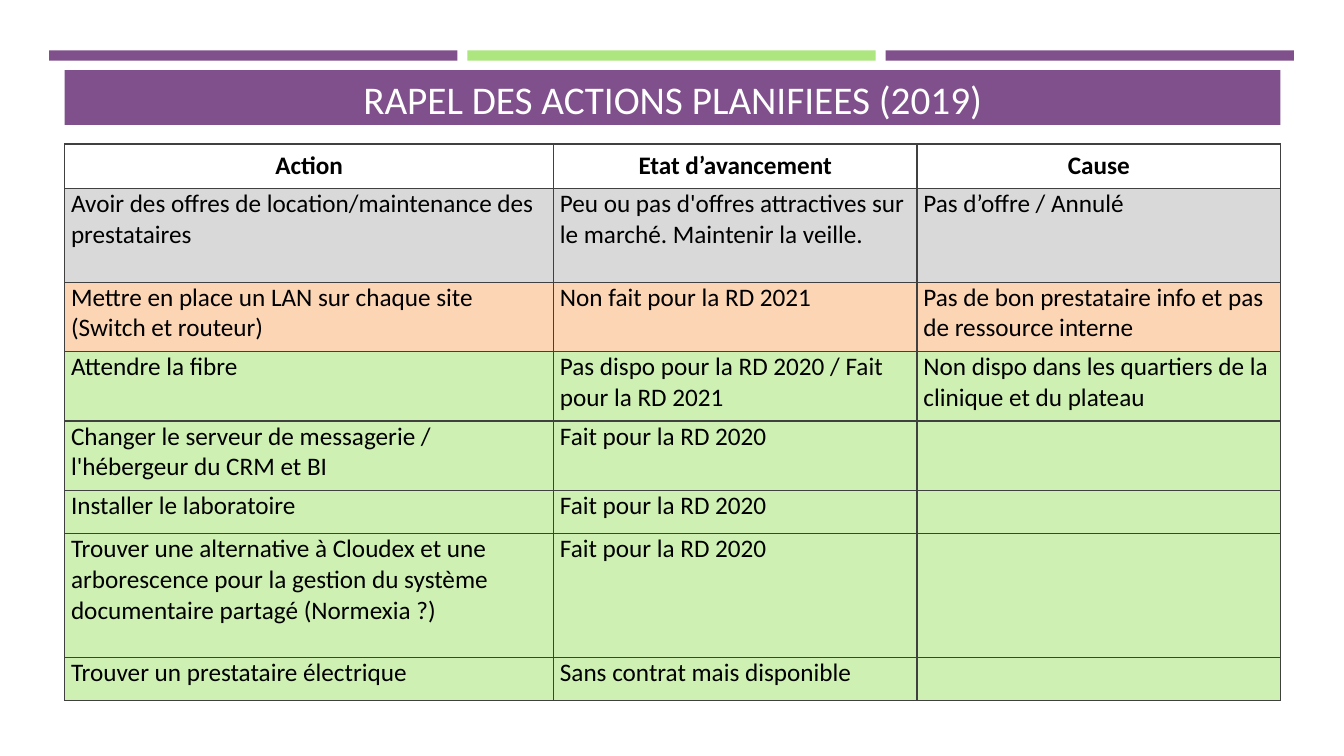
"""Build the slide that reviews the actions planned for 2019."""
from dataclasses import dataclass

from lxml import etree
from pptx import Presentation
from pptx import util as u
from pptx.dml.color import RGBColor
from pptx.enum import shapes, text
from pptx.oxml import ns


@dataclass(frozen=True)
class Theme:
    font: str = "Calibri"
    head: int = 28
    body: int = 18
    plum: str = "7F508B"
    lime: str = "ADE67F"
    white: str = "FFFFFF"
    black: str = "000000"
    line: str = "404040"
    void: str = "D9D9D9"
    late: str = "FCD5B5"
    done: str = "CEF0B2"


LOOK = Theme()
LEFT, WIDTH = 1.63, 30.64
COLS = (12.32, 9.16, 9.16)
HEADS = ("Action", "Etat d’avancement", "Cause")
ROWS = (
    (2.36, LOOK.void, "Avoir des offres de location/maintenance des prestataires",
     "Peu ou pas d'offres attractives sur le marché. Maintenir la veille.",
     "Pas d’offre / Annulé"),
    (1.75, LOOK.late, "Mettre en place un LAN sur chaque site (Switch et routeur)",
     "Non fait pour la RD 2021",
     "Pas de bon prestataire info et pas de ressource interne"),
    (1.75, LOOK.done, "Attendre la fibre",
     "Pas dispo pour la RD 2020 / Fait pour la RD 2021",
     "Non dispo dans les quartiers de la clinique et du plateau"),
    (1.75, LOOK.done, "Changer le serveur de messagerie / l'hébergeur du CRM et BI",
     "Fait pour la RD 2020", ""),
    (1.09, LOOK.done, "Installer le laboratoire", "Fait pour la RD 2020", ""),
    (3.12, LOOK.done, "Trouver une alternative à Cloudex et une arborescence pour "
     "la gestion du système documentaire partagé (Normexia ?)",
     "Fait pour la RD 2020", ""),
    (1.09, LOOK.done, "Trouver un prestataire électrique",
     "Sans contrat mais disponible", ""),
)


def apply(item, form):
    """Set each attribute named in a dict of format values."""
    for name, value in form.items():
        setattr(item, name, value)


def paint(item, color):
    """Give a shape or cell a solid fill."""
    item.fill.solid()
    item.fill.fore_color.rgb = RGBColor.from_string(color)


def write(frame, words, size, color, bold, align):
    """Put one formatted paragraph in a text frame."""
    par = frame.paragraphs[0]
    par.alignment = align
    if words:
        run = par.add_run()
        run.text = words
        apply(run.font, {"name": LOOK.font, "size": u.Pt(size), "bold": bold})
        run.font.color.rgb = RGBColor.from_string(color)


def add_bar(slide, left, color):
    """Draw one of the thin bars along the top."""
    bar = slide.shapes.add_shape(shapes.MSO_SHAPE.RECTANGLE, u.Cm(left),
                                 u.Cm(1.27), u.Cm(10.29), u.Cm(0.26))
    bar.shadow.inherit = False
    bar.line.fill.background()
    paint(bar, color)


def add_title(slide, words):
    """Place the title on its coloured band."""
    title = slide.shapes.title
    apply(title, {"left": u.Cm(LEFT), "top": u.Cm(1.77),
                  "width": u.Cm(WIDTH), "height": u.Cm(1.38)})
    paint(title, LOOK.plum)
    apply(title.text_frame, {"vertical_anchor": text.MSO_ANCHOR.TOP,
                             "auto_size": text.MSO_AUTO_SIZE.NONE,
                             "word_wrap": True})
    write(title.text_frame, words, LOOK.head, LOOK.white, False,
          text.PP_ALIGN.CENTER)


def edge(cell):
    """Draw a thin line on all four sides of a cell."""
    props = cell._tc.get_or_add_tcPr()
    for side in ("lnL", "lnR", "lnT", "lnB"):
        line = etree.SubElement(props, ns.qn(f"a:{side}"), w=str(u.Pt(1)))
        fill = etree.SubElement(line, ns.qn("a:solidFill"))
        etree.SubElement(fill, ns.qn("a:srgbClr"), val=LOOK.line)


def fill_row(row, high, color, words, head):
    """Format and fill one table row."""
    row.height = u.Cm(high)
    anchor = text.MSO_ANCHOR.MIDDLE if head else text.MSO_ANCHOR.TOP
    align = text.PP_ALIGN.CENTER if head else text.PP_ALIGN.LEFT
    for cell, word in zip(row.cells, words):
        apply(cell, {"margin_left": u.Cm(0.16), "margin_right": u.Cm(0.16),
                     "margin_top": 0, "margin_bottom": 0,
                     "vertical_anchor": anchor})
        edge(cell)
        paint(cell, color)
        write(cell.text_frame, word, LOOK.body, LOOK.black, head, align)


def add_grid(slide):
    """Add the table of actions, progress and causes."""
    rows = [(1.12, LOOK.white, *HEADS), *ROWS]
    high = sum(row[0] for row in rows)
    grid = slide.shapes.add_table(len(rows), len(COLS), u.Cm(LEFT), u.Cm(3.63),
                                  u.Cm(WIDTH), u.Cm(high)).table
    for col, wide in zip(grid.columns, COLS):
        col.width = u.Cm(wide)
    for num, (tall, color, *words) in enumerate(rows):
        fill_row(grid.rows[num], tall, color, words, num == 0)


def main():
    """Build and save the slide."""
    deck = Presentation()
    apply(deck, {"slide_width": u.Cm(33.87), "slide_height": u.Cm(19.05)})
    slide = deck.slides.add_slide(deck.slide_layouts[5])
    for num, color in enumerate((LOOK.plum, LOOK.lime, LOOK.plum)):
        add_bar(slide, 1.24 + num * 10.54, color)
    add_title(slide, "RAPEL DES ACTIONS PLANIFIEES (2019)")
    add_grid(slide)
    deck.save("out.pptx")


if __name__ == "__main__":
    main()
